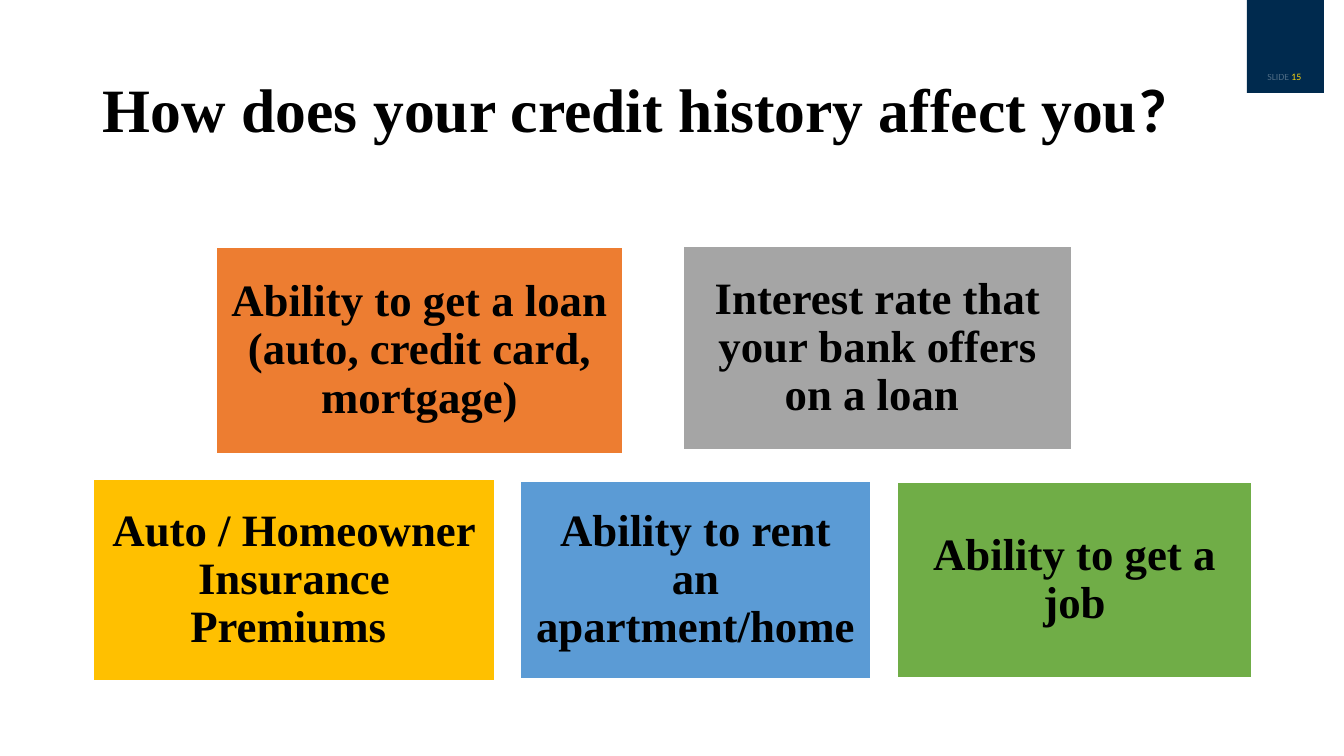
from lxml import etree
from pptx import Presentation
from pptx.dml.color import RGBColor
from pptx.enum.shapes import MSO_SHAPE
from pptx.enum.text import MSO_ANCHOR, PP_ALIGN
from pptx.oxml.ns import qn
from pptx.util import Pt

RECT = MSO_SHAPE.RECTANGLE
MID, TOP = MSO_ANCHOR.MIDDLE, MSO_ANCHOR.TOP
LEFT, CENTER = PP_ALIGN.LEFT, PP_ALIGN.CENTER
SCALE = 914400 / 100.8
SERIF, SANS = "Times New Roman", "Calibri"

TITLE = [
    ("How does your credit history affect you", SERIF, 44, "000000", True),
    ("?", SANS, 44, "000000", True),
]
TAG = [
    ("SLIDE ", SANS, 7, "FFFFFF", False),
    ("15 ", SANS, 7, "FCD60B", False),
]
CARDS = [
    ("Ability to get a loan (auto, credit card, mortgage)", "ED7D31", (216, 247, 407, 207)),
    ("Interest rate that your bank offers on a loan ", "A5A5A5", (683, 246, 389, 204)),
    ("Auto / Homeowner Insurance Premiums ", "FFC000", (93, 479, 402, 202)),
    ("Ability to rent an apartment/home", "5B9BD5", (520, 481, 351, 198)),
    ("Ability to get a job", "70AD47", (897, 482, 355, 196)),
]


def px(num):
    return round(num * SCALE)


def color(code):
    return RGBColor.from_string(code)


def write(shape, runs, align, anchor, pad, space):
    frame = shape.text_frame
    style = {"word_wrap": True, "vertical_anchor": anchor}
    style.update(zip(("margin_left", "margin_top", "margin_right", "margin_bottom"), map(px, pad)))
    for key, val in style.items():
        setattr(frame, key, val)
    para = frame.paragraphs[0]
    para.alignment = align
    para.line_spacing = space
    for text, face, size, code, bold in runs:
        run = para.add_run()
        run.text = text
        for key, val in {"name": face, "size": Pt(size), "bold": bold}.items():
            setattr(run.font, key, val)
        run.font.color.rgb = color(code)
    return para


def block(slide, box, fill, edge=None):
    shape = slide.shapes.add_shape(RECT, *map(px, box))
    shape.shadow.inherit = False
    shape.fill.solid()
    shape.fill.fore_color.rgb = color(fill)
    if edge:
        shape.line.color.rgb = color(edge)
        shape.line.width = Pt(1)
    else:
        shape.line.fill.background()
    return shape


def main():
    deck = Presentation()
    deck.slide_width, deck.slide_height = px(1344), px(756)
    slide = deck.slides.add_slide(deck.slide_layouts[6])

    block(slide, (1247, 0, 77, 93), "002A4E")
    tag = slide.shapes.add_textbox(*map(px, (1247, 66, 77, 22)))
    para = write(tag, TAG, CENTER, TOP, (10, 5, 10, 5), 1.0)
    tint = para.runs[0].font.fill._xPr.find(".//" + qn("a:srgbClr"))
    etree.SubElement(tint, qn("a:alpha")).set("val", "31000")

    title = slide.shapes.add_textbox(*map(px, (93, 40, 1159, 146)))
    write(title, TITLE, LEFT, MID, (10, 5, 10, 5), 0.9)

    for text, fill, box in CARDS:
        card = block(slide, box, fill, "FFFFFF")
        write(card, [(text, SERIF, 32, "000000", True)], CENTER, MID, (13,) * 4, 0.9)

    deck.save("out.pptx")


if __name__ == "__main__":
    main()
